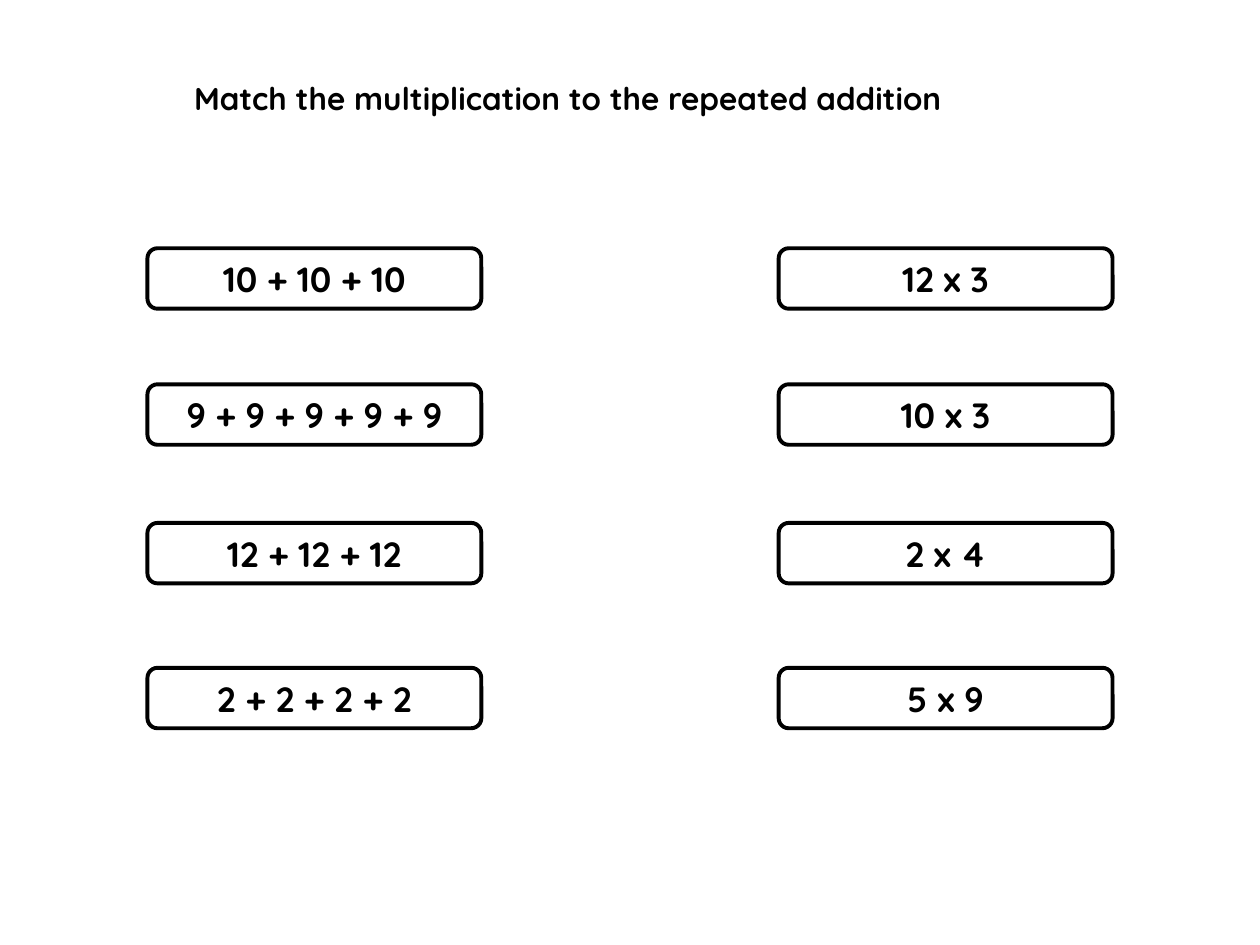
"""Build a worksheet slide that matches repeated additions to multiplications."""
from pptx import Presentation
from pptx.dml.color import RGBColor
from pptx.enum.shapes import MSO_SHAPE as Shape
from pptx.enum.text import MSO_ANCHOR as Anchor, MSO_AUTO_SIZE as AutoSize, PP_ALIGN as Align
from pptx.util import Inches, Pt

TITLE = "Match the multiplication to the repeated addition"
ADDITIONS = ["10 + 10 + 10", "9 + 9 + 9 + 9 + 9", "12 + 12 + 12", "2 + 2 + 2 + 2"]
MULTIPLICATIONS = ["12 x 3", "10 x 3", "2 x 4", "5 x 9"]

THEME = {
    "font": "Quicksand",
    "ink": RGBColor(0, 0, 0),
    "paper": RGBColor(255, 255, 255),
    "title_size": Pt(18),
    "card_size": Pt(20),
    "outline": Pt(2.25),
}

TITLE_BOX = (1.44, 0.58, 6.82, 0.4)
COLUMNS = [(1.17, ADDITIONS), (6.18, MULTIPLICATIONS)]
ROW_TOPS = [1.97, 3.05, 4.15, 5.3]
CARD_WIDTH, CARD_HEIGHT = 2.65, 0.48


def write(frame, wording, size, align):
    frame.word_wrap = True
    frame.auto_size = AutoSize.SHAPE_TO_FIT_TEXT
    frame.vertical_anchor = Anchor.MIDDLE
    paragraph = frame.paragraphs[0]
    paragraph.alignment = align
    run = paragraph.add_run()
    run.text = wording
    run.font.name = THEME["font"]
    run.font.size = size
    run.font.bold = True
    run.font.color.rgb = THEME["ink"]


def add_card(slide, left, top, expression):
    card = slide.shapes.add_shape(
        Shape.ROUNDED_RECTANGLE,
        Inches(left), Inches(top), Inches(CARD_WIDTH), Inches(CARD_HEIGHT),
    )
    card.shadow.inherit = False
    card.fill.solid()
    card.fill.fore_color.rgb = THEME["paper"]
    card.line.color.rgb = THEME["ink"]
    card.line.width = THEME["outline"]
    write(card.text_frame, expression, THEME["card_size"], Align.CENTER)


def main():
    deck = Presentation()
    deck.slide_width, deck.slide_height = Inches(10), Inches(7.5)
    slide = deck.slides.add_slide(deck.slide_layouts.get_by_name("Title Only"))

    title = slide.shapes.title
    title.left, title.top, title.width, title.height = map(Inches, TITLE_BOX)
    write(title.text_frame, TITLE, THEME["title_size"], Align.LEFT)

    for left, expressions in COLUMNS:
        for top, expression in zip(ROW_TOPS, expressions):
            add_card(slide, left, top, expression)

    deck.save("out.pptx")


if __name__ == "__main__":
    main()
